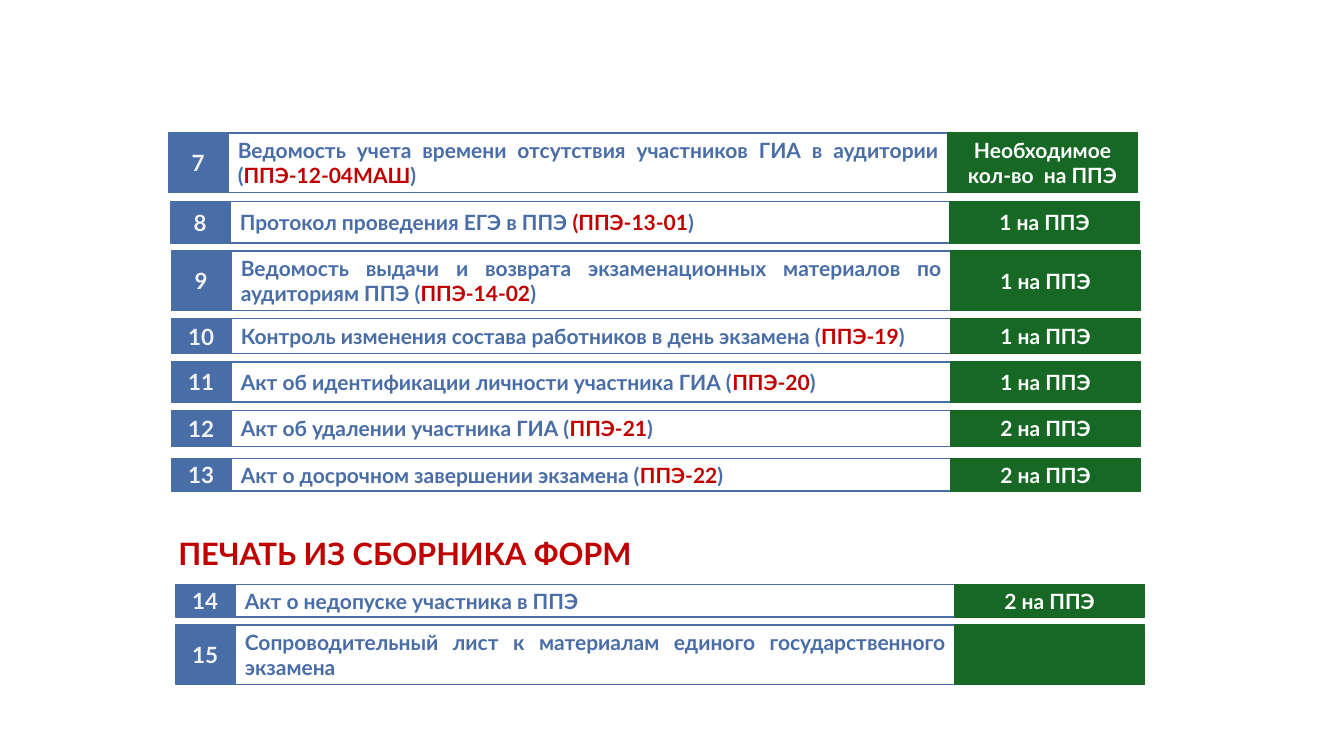
from pptx import Presentation
from pptx.dml.color import RGBColor
from pptx.enum.shapes import MSO_SHAPE as Shape
from pptx.enum.text import MSO_ANCHOR as Anchor, MSO_AUTO_SIZE as AutoSize, PP_ALIGN as Align
from pptx.util import Emu, Pt

PX = 9144
FONT = "Lato"
BLUE, GREEN, RED = "496DA7", "166824", "C00000"
WHITE, PALE = "FFFFFF", "F2F2F2"
NUMBER_WIDTH, TITLE_WIDTH, COUNT_WIDTH = 59, 715, 188
COUNT_OFFSET = NUMBER_WIDTH + TITLE_WIDTH - 1

ROWS = [
    (167, 132, 59, "7", "Ведомость учета времени отсутствия участников ГИА в аудитории (",
     "ППЭ-12-04МАШ", "Необходимое кол-во  на ППЭ"),
    (169, 200, 41, "8", "Протокол проведения ЕГЭ в ППЭ ", "(ППЭ-13-01", "1 на ППЭ"),
    (170, 249, 59, "9", "Ведомость выдачи и возврата экзаменационных материалов по аудиториям ППЭ (",
     "ППЭ-14-02", "1 на ППЭ"),
    (170, 316, 35, "10", "Контроль изменения состава работников в день экзамена (",
     "ППЭ-19", "1 на ППЭ"),
    (170, 359, 40, "11", "Акт об идентификации личности участника ГИА (", "ППЭ-20", "1 на ППЭ"),
    (170, 407, 36, "12", "Акт об удалении участника ГИА (", "ППЭ-21", "2 на ППЭ"),
    (170, 455, 32, "13", "Акт о досрочном завершении экзамена (", "ППЭ-22", "2 на ППЭ"),
    (174, 580, 32, "14", "Акт о недопуске участника в ППЭ", "", "2 на ППЭ"),
    (174, 620, 59, "15", "Сопроводительный лист к материалам единого государственного экзамена",
     "", ""),
]


def px(*lengths):
    """Turn pixel lengths into EMU."""
    return [Emu(length * PX) for length in lengths]


def color(code):
    """Turn a hex string into a colour."""
    return RGBColor.from_string(code)


def add_spans(para, spans, size):
    """Add bold runs given as (text, colour) pairs."""
    for text, code in spans:
        span = para.add_run()
        span.text = text
        span.font.name = FONT
        span.font.size = Pt(size)
        span.font.bold = True
        span.font.color.rgb = color(code)


def add_cell(page, place, spans, size, align, outline, fill=None):
    """Add one bordered rectangle with vertically centred text."""
    cell = page.shapes.add_shape(Shape.RECTANGLE, *px(*place))
    cell.shadow.inherit = False
    if fill:
        cell.fill.solid()
        cell.fill.fore_color.rgb = color(fill)
    else:
        cell.fill.background()
    cell.line.color.rgb = color(outline)
    cell.line.width = Pt(1)
    frame = cell.text_frame
    frame.word_wrap = True
    frame.vertical_anchor = Anchor.MIDDLE
    para = frame.paragraphs[0]
    para.alignment = align
    add_spans(para, spans, size)


def add_row(page, left, top, height, number, title, form, count):
    """Add a form's title, number and required count side by side."""
    title_spans = [(title, BLUE)]
    if form:
        title_spans += [(form, RED), (")", BLUE)]
    count_spans = [(count, WHITE)] if count else []
    add_cell(page, (left + NUMBER_WIDTH, top, TITLE_WIDTH, height),
             title_spans, 15, Align.JUSTIFY, BLUE)
    add_cell(page, (left, top, NUMBER_WIDTH, height),
             [(number, PALE)], 16, Align.CENTER, BLUE, BLUE)
    add_cell(page, (left + COUNT_OFFSET, top, COUNT_WIDTH, height),
             count_spans, 15, Align.CENTER, GREEN, GREEN)


def add_heading(page, place, text):
    """Add the section heading."""
    box = page.shapes.add_textbox(*px(*place))
    frame = box.text_frame
    frame.word_wrap = True
    frame.auto_size = AutoSize.SHAPE_TO_FIT_TEXT
    add_spans(frame.paragraphs[0], [(text, RED)], 22)


def main():
    """Build and save the slide."""
    deck = Presentation()
    deck.slide_width, deck.slide_height = px(1333, 750)
    page = deck.slides.add_slide(deck.slide_layouts[6])
    for row in ROWS:
        add_row(page, *row)
    add_heading(page, (167, 526, 677, 47), "ПЕЧАТЬ ИЗ СБОРНИКА ФОРМ")
    deck.save("out.pptx")


if __name__ == "__main__":
    main()
